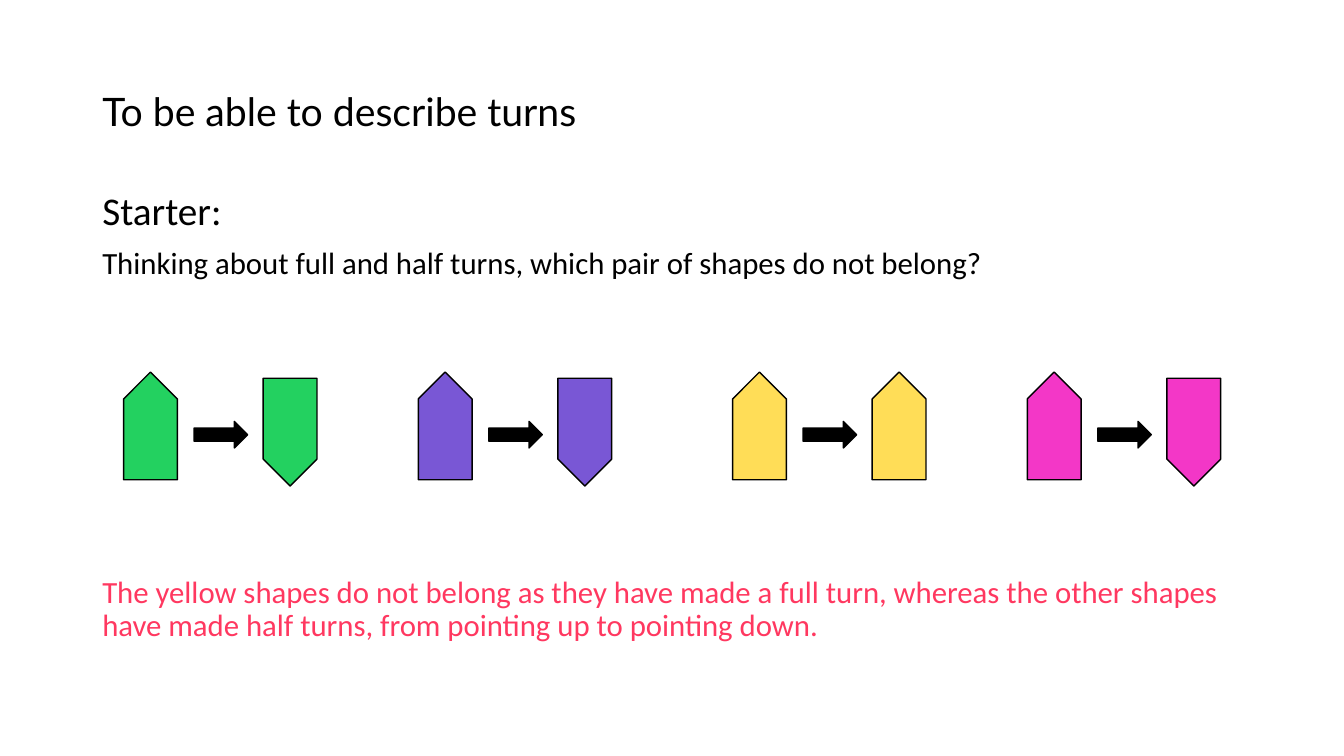
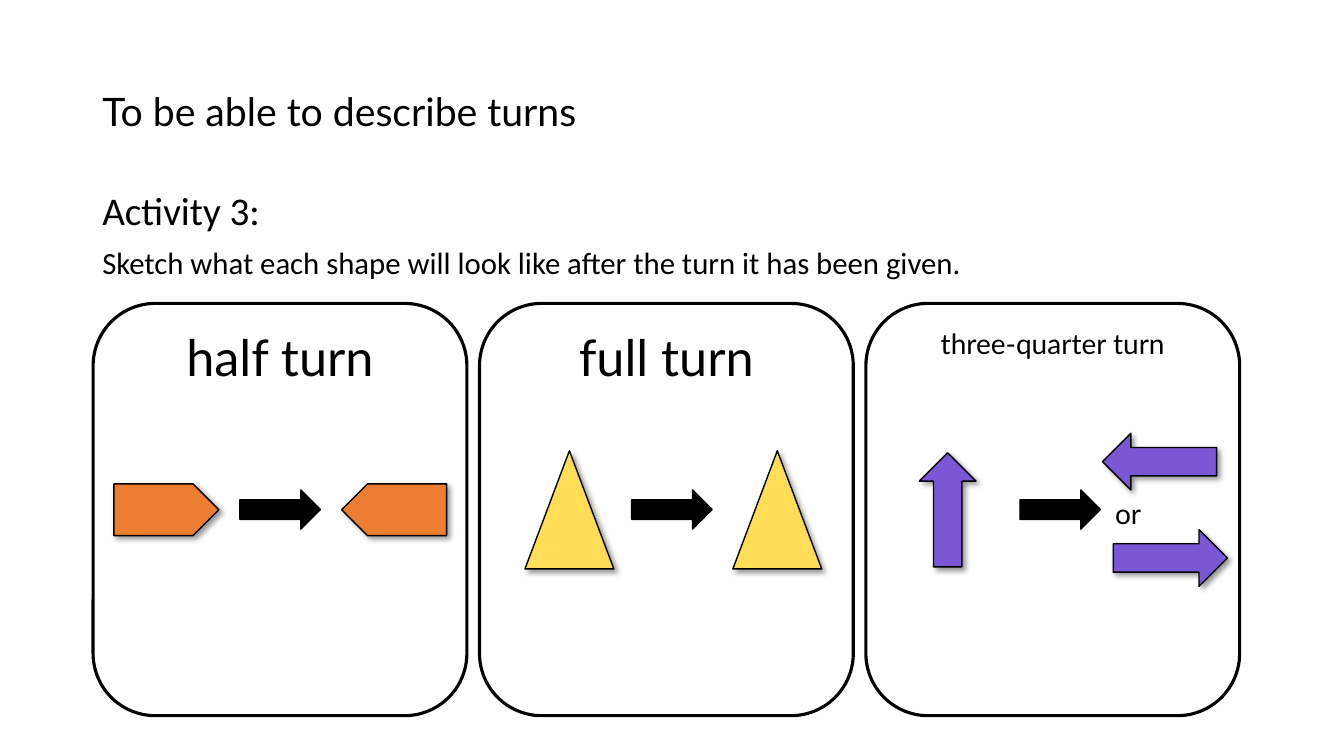
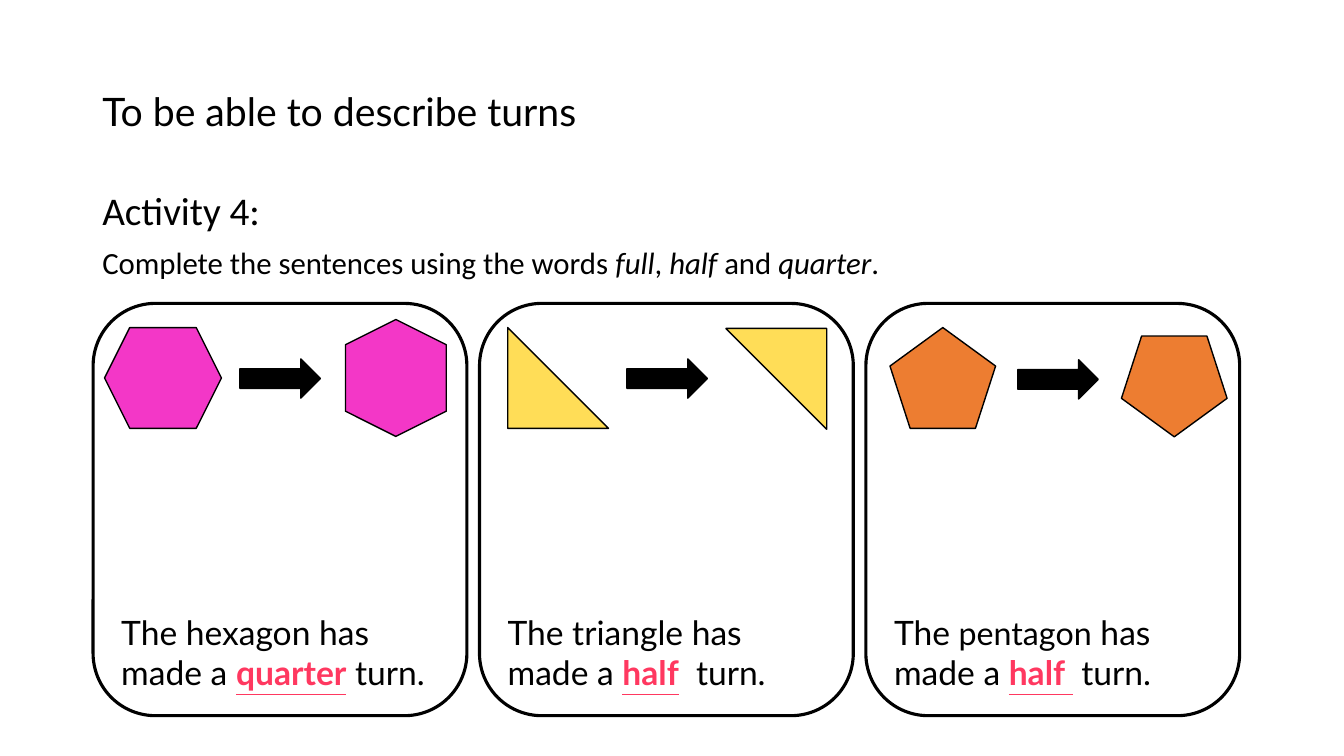
"""Build three slides on describing turns."""
from dataclasses import dataclass

from lxml.etree import SubElement
from pptx import Presentation
from pptx.dml.color import RGBColor as RGB
from pptx.enum.shapes import MSO_SHAPE as Kind
from pptx.enum.text import MSO_ANCHOR as Anchor, PP_ALIGN as Align
from pptx.oxml.ns import qn
from pptx.shapes.autoshape import Shape
from pptx.slide import Slide
from pptx.text.text import TextFrame
from pptx.util import Pt

HUES = {
    "black": "000000", "white": "FFFFFF", "red": "FF3860", "green": "23D160",
    "purple": "7957D5", "yellow": "FFDD57", "pink": "F337C7", "orange": "ED7D31",
}
TITLE = "To be able to describe turns"
CARD_X, CARD_Y, CARD_W, CARD_H, CARD_STEP = 66.5, 216.7, 267, 294.5, 276


@dataclass(frozen=True)
class Run:
    text: str
    hue: str = "black"
    size: float | None = None
    bold: bool = False
    slant: bool = False
    under: bool = False


@dataclass(frozen=True)
class Item:
    kind: Kind
    x: float
    y: float
    w: float
    h: float
    hue: str
    turn: float = 0


def write(frame: TextFrame, text: str | list[Run], *, font: str = "Lato",
          size: float = 20, hue: str = "black", align: Align = Align.LEFT,
          before: float = 0, pitch: float = 1) -> None:
    para = frame.paragraphs[0] if not frame.text else frame.add_paragraph()
    para.alignment, para.line_spacing = align, pitch
    para.space_before = Pt(before)
    for part in [Run(text, hue)] if isinstance(text, str) else text:
        run = para.add_run()
        run.text = part.text
        run.font.name, run.font.size = font, Pt(part.size or size)
        run.font.bold, run.font.italic = part.bold, part.slant
        run.font.underline = part.under
        run.font.color.rgb = RGB.from_string(HUES[part.hue])


def add_box(slide: Slide, x: float, y: float, w: float, h: float,
            anchor: Anchor = Anchor.TOP) -> TextFrame:
    frame = slide.shapes.add_textbox(Pt(x), Pt(y), Pt(w), Pt(h)).text_frame
    frame.word_wrap, frame.vertical_anchor = True, anchor
    return frame


def add_shade(shape: Shape) -> None:
    glow = shape._element.spPr.find(qn("a:effectLst"))
    outer = SubElement(glow, qn("a:outerShdw"), blurRad=str(Pt(4)), dist=str(Pt(3)),
                       dir="2700000", algn="tl", rotWithShape="0")
    tone = SubElement(outer, qn("a:srgbClr"), val=HUES["black"])
    SubElement(tone, qn("a:alpha"), val="40000")


def draw(slide: Slide, item: Item, line: float = 1, shade: bool = False) -> Shape:
    shape = slide.shapes.add_shape(item.kind, Pt(item.x), Pt(item.y), Pt(item.w), Pt(item.h))
    shape.rotation = item.turn
    shape.shadow.inherit = False
    shape.fill.solid()
    shape.fill.fore_color.rgb = RGB.from_string(HUES[item.hue])
    shape.line.color.rgb = RGB.from_string(HUES["black"])
    shape.line.width = Pt(line)
    if shade:
        add_shade(shape)
    return shape


def add_arrow(slide: Slide, x: float, y: float, w: float = 57.5, h: float = 28) -> None:
    draw(slide, Item(Kind.RIGHT_ARROW, x, y, w, h, "black"))


def add_card(slide: Slide, spot: int, anchor: Anchor) -> TextFrame:
    x = CARD_X + spot * CARD_STEP
    item = Item(Kind.ROUNDED_RECTANGLE, x, CARD_Y, CARD_W, CARD_H, "white")
    frame = draw(slide, item, line=2.25).text_frame
    frame.word_wrap, frame.vertical_anchor = True, anchor
    return frame


def add_page(deck: Presentation, head: str, task: str | list[Run]) -> tuple[Slide, TextFrame]:
    slide = deck.slides.add_slide(deck.slide_layouts[6])
    write(add_box(slide, 66, 28.8, 691, 104.4, Anchor.MIDDLE), TITLE, size=28, pitch=0.9)
    body = add_box(slide, 66, 133.2, 828, 342.8)
    write(body, head, font="Calibri", size=28, pitch=0.9)
    write(body, task, font="Calibri", size=22, before=10, pitch=0.9)
    return slide, body


def starter(deck: Presentation) -> None:
    slide, body = add_page(
        deck, "Starter:",
        "Thinking about full and half turns, which pair of shapes do not belong?")
    write(body, "The yellow shapes do not belong as they have made a full turn, whereas "
          "the other shapes have made half turns, from pointing up to pointing down.",
          font="Calibri", size=22, hue="red", before=211.5, pitch=0.9)
    for spot, hue in enumerate(("green", "purple", "yellow", "pink")):
        half, side = divmod(spot, 2)
        x = 69 + 435 * half + 210.5 * side
        y, turn = (285, 270) if hue == "yellow" else (289.5, 90)
        draw(slide, Item(Kind.PENTAGON, x, 285, 77, 38.4, hue, 270))
        draw(slide, Item(Kind.PENTAGON, x + 99.7, y, 77, 38.4, hue, turn))
        add_arrow(slide, x + 69.7, 301, 38.2, 19)


def sketches(deck: Presentation) -> None:
    slide, _ = add_page(
        deck, "Activity 3:",
        "Sketch what each shape will look like after the turn it has been given.")
    cards = (("half turn", 36, 171.4), ("full turn", 36, 451.2), ("three-quarter turn", 20, 728.6))
    for spot, (label, size, arrow) in enumerate(cards):
        write(add_card(slide, spot, Anchor.TOP), label, size=size, align=Align.CENTER)
        add_arrow(slide, arrow, 350)
    for item in (
        Item(Kind.PENTAGON, 81.4, 345.6, 75, 37, "orange"),
        Item(Kind.PENTAGON, 244, 345.6, 75, 37, "orange", 180),
        Item(Kind.ISOSCELES_TRIANGLE, 375, 322, 63.5, 84.4, "yellow"),
        Item(Kind.ISOSCELES_TRIANGLE, 523.5, 322, 63.5, 84.4, "yellow"),
        Item(Kind.UP_ARROW, 656.7, 323.4, 40.5, 81.5, "purple"),
        Item(Kind.UP_ARROW, 808, 289, 40.5, 81.5, "purple", 270),
        Item(Kind.UP_ARROW, 815.7, 357.8, 40.5, 81.5, "purple", 90),
    ):
        draw(slide, item, shade=True)
    write(add_box(slide, 780, 351, 51.5, 31), "or", align=Align.CENTER)


def gaps(deck: Presentation) -> None:
    slide, _ = add_page(deck, "Activity 4:", [
        Run("Complete the sentences using the words "), Run("full", slant=True), Run(", "),
        Run("half", slant=True), Run(" and "), Run("quarter", slant=True), Run(".")])
    cards = (
        ([Run("The hexagon has made a ")], "quarter", " turn.", 171.4, 256.4),
        ([Run("The triangle has made a ")], "half", "  turn.", 447.8, 256.4),
        ([Run("The "), Run("pentagon", size=23), Run(" has made a ")],
         "half ", " turn.", 727, 257),
    )
    for spot, (start, word, end, x, y) in enumerate(cards):
        reply = Run(word, "red", bold=True, under=True)
        write(add_card(slide, spot, Anchor.BOTTOM), [*start, reply, Run(end)], size=24)
        add_arrow(slide, x, y)
    for item in (
        Item(Kind.HEXAGON, 74.7, 234, 83.5, 72, "pink"),
        Item(Kind.HEXAGON, 241, 234, 83.5, 72, "pink", 90),
        Item(Kind.RIGHT_TRIANGLE, 362.7, 234, 72, 72, "yellow"),
        Item(Kind.RIGHT_TRIANGLE, 518.5, 234.6, 72, 72, "yellow", 180),
        Item(Kind.REGULAR_PENTAGON, 635.7, 234, 75.5, 72, "orange"),
        Item(Kind.REGULAR_PENTAGON, 801, 240, 75.5, 72, "orange", 180),
    ):
        draw(slide, item)


def main() -> None:
    deck = Presentation()
    deck.slide_width, deck.slide_height = Pt(960), Pt(540)
    for build in (starter, sketches, gaps):
        build(deck)
    deck.save("out.pptx")


if __name__ == "__main__":
    main()
